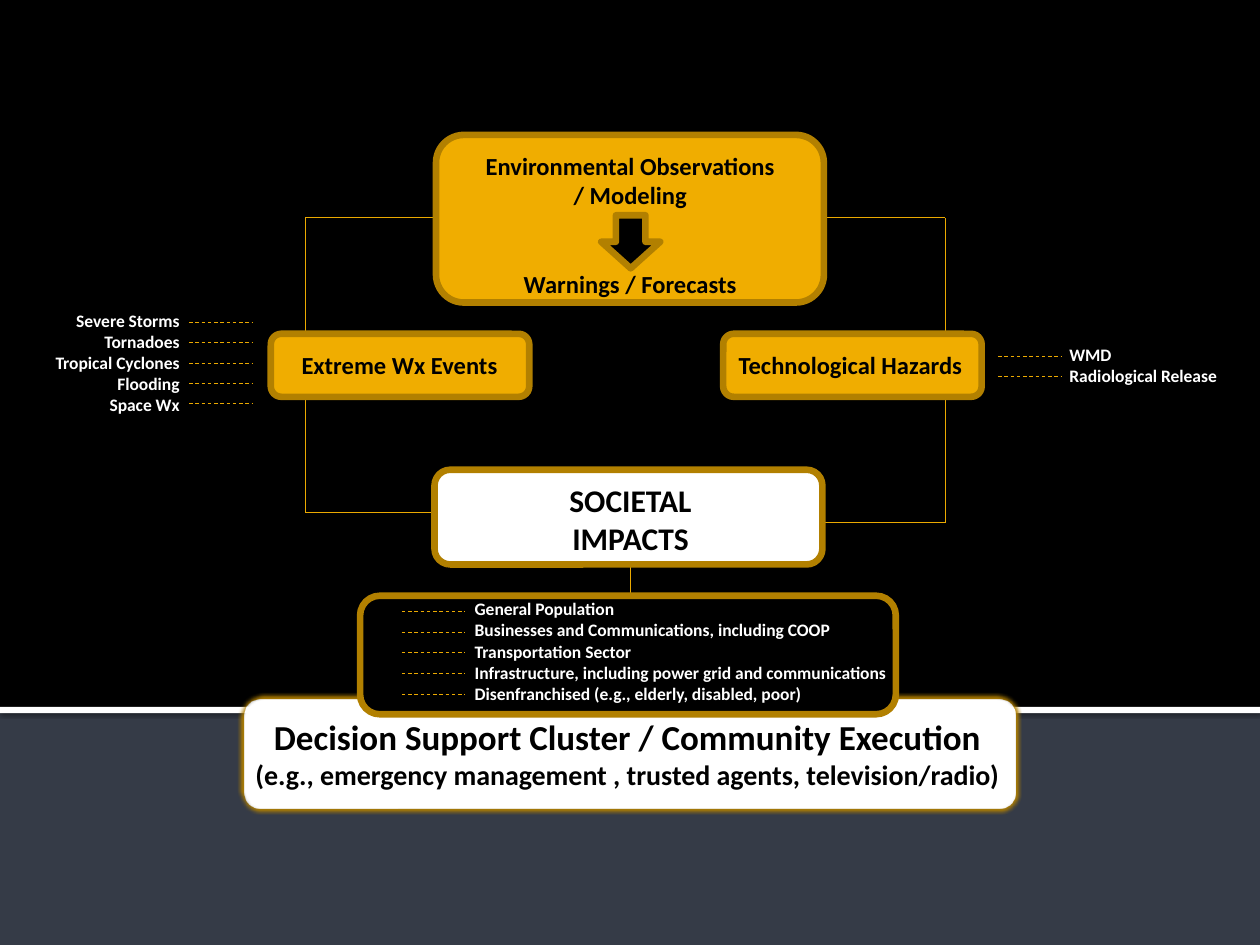
from dataclasses import dataclass

from lxml.etree import SubElement
from pptx import Presentation
from pptx.dml.color import RGBColor as Rgb
from pptx.enum.dml import MSO_LINE_DASH_STYLE as Dash
from pptx.enum.shapes import MSO_CONNECTOR as Link, MSO_SHAPE as Kind
from pptx.enum.text import PP_ALIGN as Align
from pptx.oxml.ns import qn
from pptx.util import Cm, Pt

COLORS = {
    "black": "000000", "white": "FFFFFF", "slate": "353B47",
    "gold": "F0AD00", "edge": "B28000", "wire": "EBA900",
}
FONT = "Calibri"


@dataclass
class Box:
    x: float
    y: float
    w: float
    h: float
    fill: str
    edge: bool = True
    kind: Kind = Kind.ROUNDED_RECTANGLE


@dataclass
class Label:
    x: float
    y: float
    w: float
    h: float
    lines: list[str]
    sizes: list[int]
    color: str = "black"
    align: Align = Align.CENTER
    wrap: bool = True
    gap: float = 0


@dataclass
class Ticks:
    x: float
    y: float
    step: float
    count: int


def color(name: str) -> Rgb:
    return Rgb.from_string(COLORS[name])


def draw_box(slide, box: Box):
    shape = slide.shapes.add_shape(
        box.kind, Cm(box.x), Cm(box.y), Cm(box.w), Cm(box.h))
    shape.shadow.inherit = False
    shape.fill.solid()
    shape.fill.fore_color.rgb = color(box.fill)
    if box.edge:
        shape.line.color.rgb = color("edge")
        shape.line.width = Pt(3.78)
    else:
        shape.line.fill.background()
    return shape


def draw_label(slide, label: Label) -> None:
    frame = slide.shapes.add_textbox(
        Cm(label.x), Cm(label.y), Cm(label.w), Cm(label.h)).text_frame
    frame.word_wrap = label.wrap
    frame.text = "\n".join(label.lines)
    for i, para in enumerate(frame.paragraphs):
        para.alignment = label.align
        if i:
            para.space_before = Pt(label.gap)
        font = para.runs[0].font
        font.name, font.bold = FONT, True
        font.size = Pt(label.sizes[min(i, len(label.sizes) - 1)])
        font.color.rgb = color(label.color)


def draw_line(slide, x1: float, y1: float, x2: float, y2: float,
              dash: bool = False) -> None:
    line = slide.shapes.add_connector(
        Link.STRAIGHT, Cm(x1), Cm(y1), Cm(x2), Cm(y2))
    line.line.color.rgb = color("wire")
    line.line.width = Pt(0.5)
    if dash:
        line.line.dash_style = Dash.DASH
    SubElement(line._element.spPr, qn("a:effectLst"))


def draw_ticks(slide, ticks: Ticks) -> None:
    for i in range(ticks.count):
        y = ticks.y + i * ticks.step
        draw_line(slide, ticks.x, y, ticks.x + 1.27, y, dash=True)


def add_effect(shape, tag: str, **attrs: str):
    effects = shape._element.spPr.find(qn("a:effectLst"))
    return SubElement(effects, qn(tag), **attrs)


def main() -> None:
    prs = Presentation()
    prs.slide_width, prs.slide_height = Cm(25.4), Cm(19.05)
    slide = prs.slides.add_slide(prs.slide_layouts[6])

    # Backdrop
    slide.background.fill.solid()
    slide.background.fill.fore_color.rgb = color("slate")
    draw_box(slide, Box(0, 0, 25.4, 14.27, "black", False, Kind.RECTANGLE))
    bar = draw_box(
        slide, Box(0, 14.25, 25.4, 0.13, "white", False, Kind.RECTANGLE))
    shade = add_effect(bar, "a:outerShdw", blurRad="31750", dist="10160",
                       dir="5400000")
    tint = SubElement(shade, qn("a:srgbClr"), val=COLORS["black"])
    SubElement(tint, qn("a:alpha"), val="60000")

    # Wires from forecasts through both hazards to impacts
    for inner, outer, low in ((9.53, 6.15, 10.34), (15.67, 19.05, 10.54)):
        for y, end in ((4.39, 7.57), (low, 7.16)):
            draw_line(slide, inner, y, outer, y)
            draw_line(slide, outer, y, outer, end)
    draw_line(slide, 12.7, 10.74, 12.7, 12.01)

    # Decision support panel
    panel = draw_box(slide, Box(4.86, 14.02, 15.67, 2.34, "white"))
    add_effect(panel, "a:softEdge", rad="31750")
    draw_label(slide, Label(
        4.8, 14.3, 15.7, 1.8,
        ["Decision Support Cluster / Community Execution",
         "(e.g., emergency management , trusted agents, television/radio)"],
        [20, 16], wrap=False))

    # Flow boxes
    for box in (
        Box(7.26, 12.01, 10.8, 2.39, "black"),
        Box(8.79, 2.72, 7.82, 3.38, "gold"),
        Box(5.46, 6.73, 5.21, 1.27, "gold"),
        Box(14.58, 6.73, 5.21, 1.27, "gold"),
        Box(8.76, 9.47, 7.82, 1.91, "white"),
        Box(12.12, 4.34, 1.19, 1.07, "black", kind=Kind.DOWN_ARROW),
    ):
        draw_box(slide, box)

    # Box captions and lists
    for label in (
        Label(9.53, 2.92, 6.35, 3.25,
              ["Environmental Observations / Modeling",
               "Warnings / Forecasts"], [14], gap=34),
        Label(4.88, 6.93, 6.35, 0.86, ["Extreme Wx Events"], [14]),
        Label(13.97, 6.93, 6.35, 0.86, ["Technological Hazards"], [14]),
        Label(10.69, 9.58, 4.04, 1.8, ["SOCIETAL IMPACTS"], [18]),
        Label(0.69, 6.12, 3.18, 2.39,
              ["Severe Storms", "Tornadoes", "Tropical Cyclones",
               "Flooding", "Space Wx"],
              [10], "white", Align.RIGHT, False),
        Label(21.31, 6.81, 3.66, 1.12, ["WMD", "Radiological Release"],
              [10], "white", Align.LEFT, False),
        Label(9.32, 11.94, 9.19, 2.39,
              ["General Population",
               "Businesses and Communications, including COOP",
               "Transportation Sector",
               "Infrastructure, including power grid and communications",
               "Disenfranchised (e.g., elderly, disabled, poor)"],
              [10], "white", Align.LEFT, False),
    ):
        draw_label(slide, label)

    # Dashed ticks beside the lists
    for ticks in (Ticks(3.81, 6.5, 0.41, 5), Ticks(20.12, 7.19, 0.39, 2),
                  Ticks(8.1, 12.32, 0.42, 5)):
        draw_ticks(slide, ticks)

    prs.save("out.pptx")


if __name__ == "__main__":
    main()
